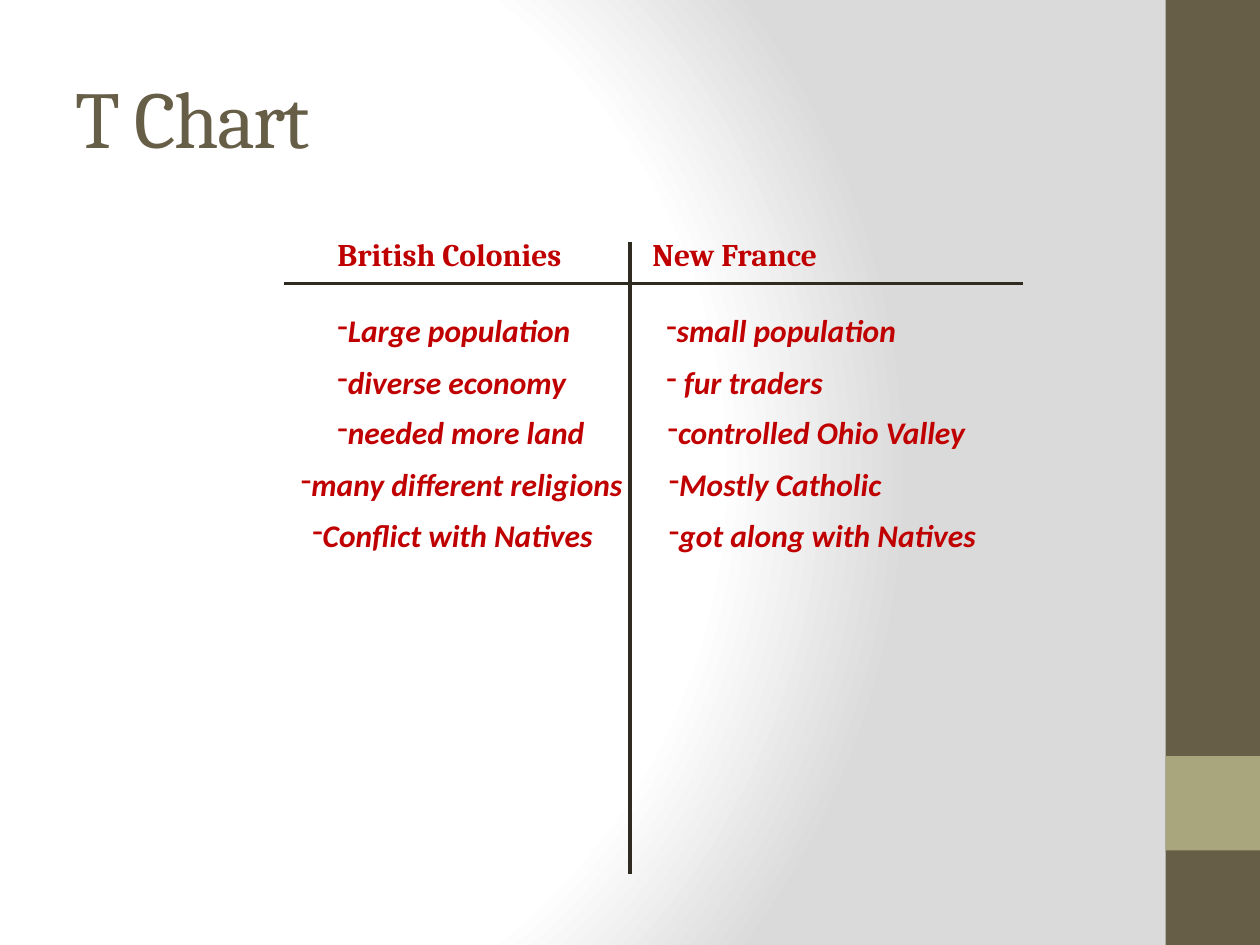
from pptx import Presentation
from pptx import util as u
from pptx.dml.color import RGBColor
from pptx.enum import shapes, text
from pptx.oxml import parse_xml
from pptx.oxml.ns import nsdecls
from lxml import etree

A = "{http://schemas.openxmlformats.org/drawingml/2006/main}"


def colour(hex_value):
    return RGBColor.from_string(hex_value)


class SlideBuilder:
    BROWN, SAGE, INK, RED = "675E47", "A9A57C", "2F2B20", "C00000"
    TITLE = dict(name="Cambria", size=u.Pt(46))
    HEADING = dict(name="Cambria", size=u.Pt(18), bold=True)
    POINT = dict(name="Calibri", size=u.Pt(18), bold=True, italic=True)

    def __init__(self, slide):
        self.slide = slide

    def background(self, stops, centre):
        gradient_stops = "".join(
            f'<a:gs pos="{pos * 1000}"><a:srgbClr val="{value}"/></a:gs>'
            for pos, value in stops)
        rect = " ".join(f'{side}="{pct * 1000}"' for side, pct in zip("ltrb", centre))
        self.slide.element.cSld.insert(0, parse_xml(
            f'<p:bg {nsdecls("p", "a")}><p:bgPr><a:gradFill rotWithShape="1">'
            f'<a:gsLst>{gradient_stops}</a:gsLst>'
            f'<a:path path="circle"><a:fillToRect {rect}/></a:path>'
            f'</a:gradFill><a:effectLst/></p:bgPr></p:bg>'))

    def band(self, box, fill):
        band = self.slide.shapes.add_shape(
            shapes.MSO_SHAPE.RECTANGLE, *map(u.Inches, box))
        band.shadow.inherit = False
        band.fill.solid()
        band.fill.fore_color.rgb = colour(fill)
        band.line.fill.background()

    def rule(self, *ends):
        rule = self.slide.shapes.add_connector(
            shapes.MSO_CONNECTOR.STRAIGHT, *map(u.Inches, ends))
        rule.line.color.rgb = colour(self.INK)
        rule.line.width = u.Pt(2)
        etree.SubElement(rule._element.spPr, A + "effectLst")

    def label(self, box, words, style, hue, wrap=False):
        frame = self.slide.shapes.add_textbox(*map(u.Inches, box)).text_frame
        frame.word_wrap = wrap
        if wrap:
            frame.vertical_anchor = text.MSO_ANCHOR.MIDDLE
        else:
            frame.auto_size = text.MSO_AUTO_SIZE.SHAPE_TO_FIT_TEXT
        run = frame.paragraphs[0].add_run()
        run.text = words
        for key, value in style.items():
            setattr(run.font, key, value)
        run.font.color.rgb = colour(hue)
        return frame.paragraphs[0], run

    def point(self, box, words):
        paragraph, _ = self.label(box, words, self.POINT, self.RED)
        props = paragraph._p.get_or_add_pPr()
        props.set("marL", "0")
        props.set("indent", "0")
        etree.SubElement(props, A + "buFontTx")
        etree.SubElement(props, A + "buChar", char="-")


def main():
    deck = Presentation()
    deck.slide_width, deck.slide_height = u.Inches(10), u.Inches(7.5)
    page = SlideBuilder(deck.slides.add_slide(deck.slide_layouts[6]))

    # Backdrop and side bands
    page.background([(0, "FFFFFF"), (75, "FFFFFF"), (100, "DADADA")],
                    (20, 50, 100, 50))
    page.band((9.25, 0, 0.75, 7.5), page.BROWN)
    page.band((9.25, 6, 0.75, 0.75), page.SAGE)

    # Title
    _, title = page.label((0.5, 0.3, 8.33, 1.25), "T Chart",
                          page.TITLE, page.BROWN, wrap=True)
    title.font._element.set("spc", "-100")

    # The T and its headings
    page.rule(2.25, 2.25, 8.12, 2.25)
    page.rule(5, 1.92, 5, 6.94)
    page.label((2.58, 1.82, 4.57, 0.4), "British Colonies\t\tNew France",
               page.HEADING, page.RED)

    # Points of each column: left, width, wording
    british_colonies = [
        (2.58, 2.07, "Large population"),
        (2.58, 2.03, "diverse economy"),
        (2.58, 2.18, "needed more land"),
        (2.29, 2.79, "many different religions"),
        (2.38, 2.45, "Conflict with Natives"),
    ]
    new_france = [
        (5.19, 2.04, "small population"),
        (5.19, 1.46, " fur traders"),
        (5.2, 2.58, "controlled Ohio Valley"),
        (5.21, 1.9, "Mostly Catholic"),
        (5.21, 2.66, "got along with Natives"),
    ]
    first_row, row_step = 2.42, 0.407
    for column in (british_colonies, new_france):
        for row, (left, width, words) in enumerate(column):
            page.point((left, round(first_row + row * row_step, 2), width, 0.4), words)

    deck.save("out.pptx")


if __name__ == "__main__":
    main()
